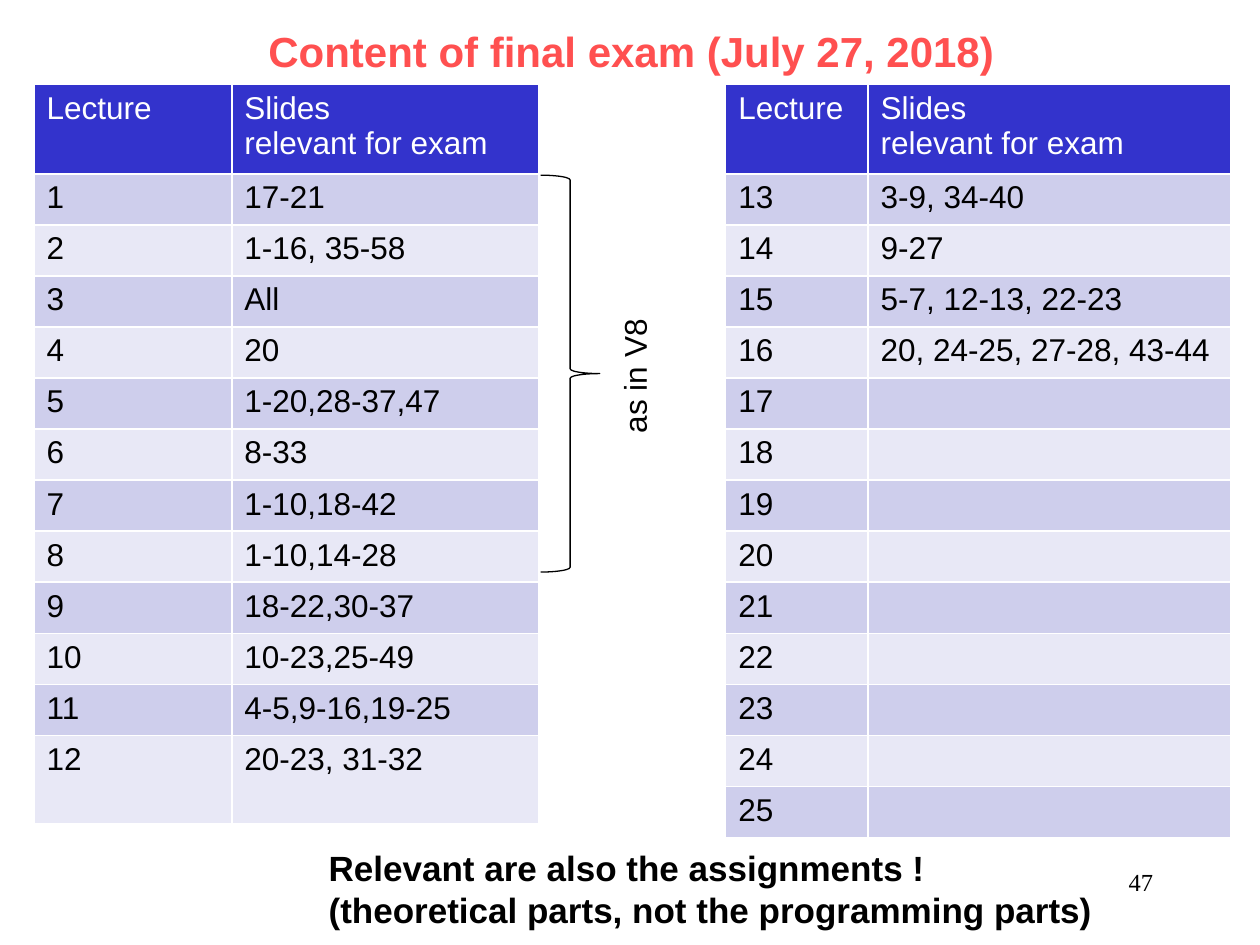
from pptx import Presentation
from pptx.dml.color import RGBColor
from pptx.enum.shapes import MSO_SHAPE as SHAPE
from pptx.enum.text import MSO_ANCHOR as ANCHOR, PP_ALIGN as ALIGN
from pptx.util import Inches, Pt

BLACK = RGBColor(0x00, 0x00, 0x00)
WHITE = RGBColor(0xFF, 0xFF, 0xFF)
RED = RGBColor(0xFF, 0x50, 0x50)
BLUE = RGBColor(0x33, 0x33, 0xCC)
BANDS = RGBColor(0xE8, 0xE8, 0xF6), RGBColor(0xCE, 0xCE, 0xEC)

HEADER = ("Lecture", "Slides\nrelevant for exam")
FIRST_LECTURES = [
    "17-21", "1-16, 35-58", "All", "20", "1-20,28-37,47", "8-33",
    "1-10,18-42", "1-10,14-28", "18-22,30-37", "10-23,25-49",
    "4-5,9-16,19-25", "20-23, 31-32",
]
LATER_LECTURES = [
    "3-9, 34-40", "9-27", "5-7, 12-13, 22-23", "20, 24-25, 27-28, 43-44",
] + [""] * 9


class ExamSlide:
    """Holds the text style and the current slide, and adds elements to it."""

    base = {"name": "Arial", "size": Pt(18), "bold": False}

    def __init__(self, prs):
        self.s = prs.slides.add_slide(prs.slide_layouts[5])

    def fill_text(self, tf, text, color=BLACK, align=ALIGN.LEFT, **style):
        for i, line in enumerate(text.split("\n")):
            p = tf.add_paragraph() if i else tf.paragraphs[0]
            p.alignment = align
            if line:
                r = p.add_run()
                r.text = line
                for key, value in {**self.base, **style}.items():
                    setattr(r.font, key, value)
                r.font.color.rgb = color

    def title(self, text, box):
        sp = self.s.shapes.title
        sp.left, sp.top, sp.width, sp.height = map(Inches, box)
        tf = sp.text_frame
        frame = {
            "vertical_anchor": ANCHOR.BOTTOM, "word_wrap": True,
            "margin_left": Inches(0.11), "margin_right": Inches(0.13),
            "margin_top": 0, "margin_bottom": 0,
        }
        for key, value in frame.items():
            setattr(tf, key, value)
        self.fill_text(tf, text, RED, ALIGN.CENTER, size=Pt(24), bold=True)

    def text(self, text, box, rotation=0, wrap=False, **style):
        sp = self.s.shapes.add_textbox(*map(Inches, box))
        sp.rotation = rotation
        sp.text_frame.word_wrap = wrap
        self.fill_text(sp.text_frame, text, **style)

    def table(self, first, slides, box, widths, header=0.71, last=None):
        rows = [HEADER] + [(str(n), t) for n, t in enumerate(slides, first)]
        tbl = self.s.shapes.add_table(len(rows), 2, *map(Inches, box)).table
        for col, width in zip(tbl.columns, widths):
            col.width = Inches(width)
        plain = len(slides) - (1 if last else 0)
        body = (box[3] - header - (last or 0)) / plain
        heights = [header] + [body] * plain + ([last] if last else [])
        for i, (values, height) in enumerate(zip(rows, heights)):
            tbl.rows[i].height = Inches(height)
            for j, value in enumerate(values):
                cell = tbl.cell(i, j)
                cell.fill.solid()
                cell.fill.fore_color.rgb = BANDS[i % 2] if i else BLUE
                self.fill_text(cell.text_frame, value, BLACK if i else WHITE)

    def brace(self, box):
        sp = self.s.shapes.add_shape(SHAPE.RIGHT_BRACE, *map(Inches, box))
        sp.shadow.inherit = False
        sp.adjustments[0], sp.adjustments[1] = 0.08, 0.5
        sp.fill.background()
        sp.line.color.rgb = BLACK
        sp.line.width = Pt(0.75)


def main():
    prs = Presentation()
    prs.slide_width, prs.slide_height = Inches(10), Inches(7.5)
    s = ExamSlide(prs)
    s.text("47", (7.17, 6.83, 2.08, 0.5), wrap=True, align=ALIGN.RIGHT,
           name="Times New Roman", size=Pt(14))
    s.title("Content of final exam (July 27, 2018)", (0.27, 0.05, 9.5, 0.55))
    s.table(1, FIRST_LECTURES, (0.27, 0.67, 4.02, 5.87), (1.57, 2.44), last=0.7)
    s.table(13, LATER_LECTURES, (5.76, 0.67, 4.02, 5.98), (1.13, 2.88))
    s.text("Relevant are also the assignments !\n"
           "(theoretical parts, not the programming parts)",
           (2.51, 6.67, 6.3, 0.77), size=Pt(20), bold=True)
    s.brace((4.29, 1.39, 0.47, 3.15))
    s.text("as in V8", (4.48, 2.78, 1.11, 0.4), rotation=270)
    prs.save("out.pptx")


if __name__ == "__main__":
    main()
